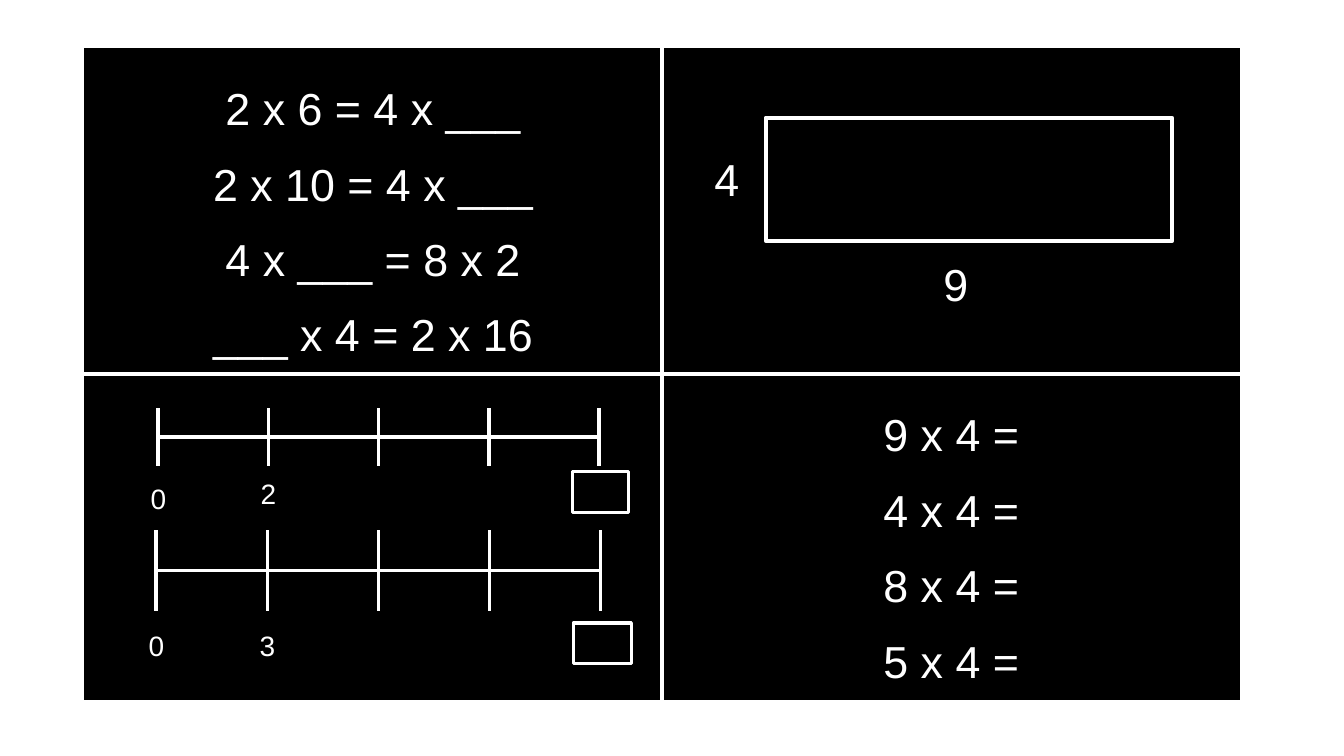
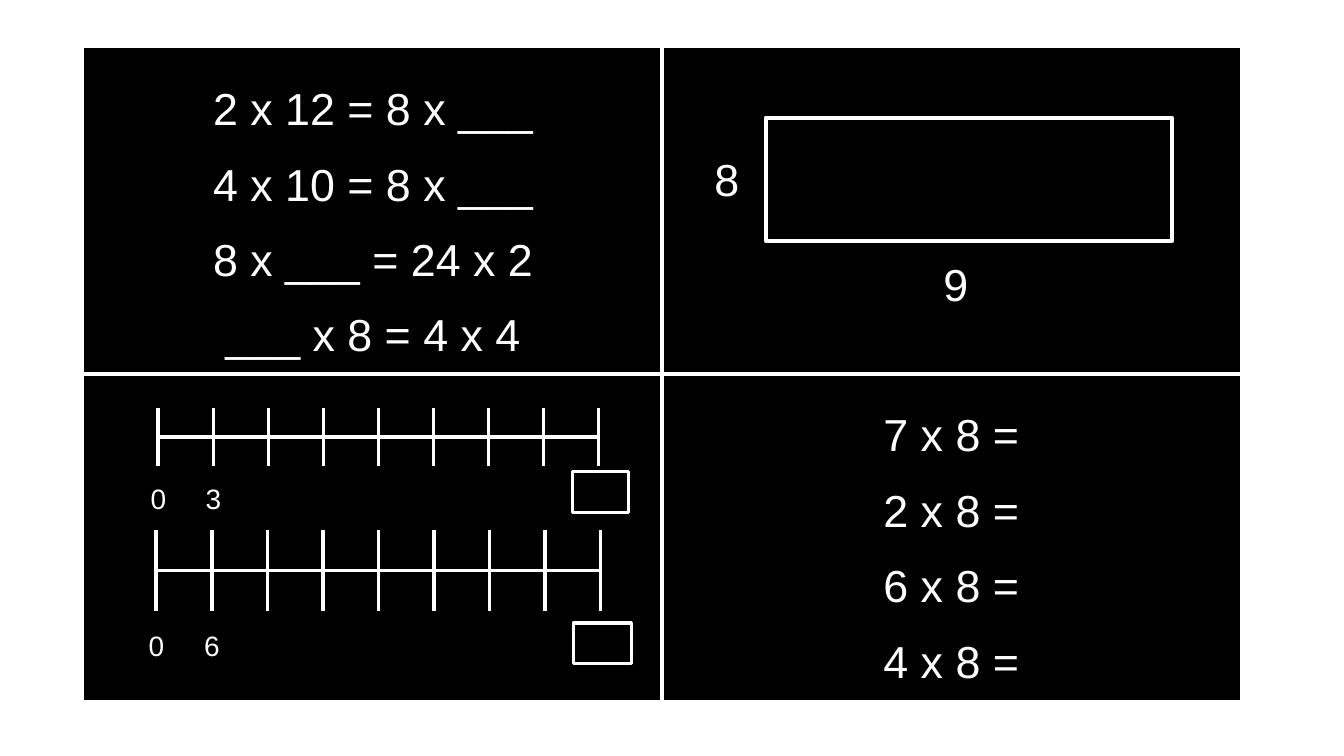
import pptx
import pptx.util
import pptx.dml.color
import pptx.enum.shapes
import pptx.enum.text
import pptx.oxml.ns
import lxml.etree

Cm = pptx.util.Cm
Pt = pptx.util.Pt
WHITE = pptx.dml.color.RGBColor(0xFF, 0xFF, 0xFF)
BLACK = pptx.dml.color.RGBColor(0x00, 0x00, 0x00)
LARGE = {"name": "Arial", "size": Pt(32), "bold": False}
SMALL = {"name": "Arial", "size": Pt(20), "bold": False}
CENTER = {"alignment": pptx.enum.text.PP_ALIGN.CENTER}
EQUATION = {**CENTER, "line_spacing": 1.5}
BOARD = (2.12, 1.2, 29.14, 16.44)

SHEETS = [
    {
        "equations": ["2 x 6 = 4 x ___", "2 x 10 = 4 x ___", "4 x ___ = 8 x 2", "___ x 4 = 2 x 16"],
        "facts": ["9 x 4 =", "4 x 4 =", "8 x 4 =", "5 x 4 ="],
        "sides": ("4", "9"),
        "jumps": 4,
        "steps": ("2", "3"),
        "step_drops": (1.6, 2.36),
    },
    {
        "equations": ["2 x 12 = 8 x ___", "4 x 10 = 8 x ___", "8 x ___ = 24 x 2", "___ x 8 = 4 x 4"],
        "facts": ["7 x 8 =", "2 x 8 =", "6 x 8 =", "4 x 8 ="],
        "sides": ("8", "9"),
        "jumps": 8,
        "steps": ("3", "6"),
        "step_drops": (1.72, 2.36),
    },
]


def apply(obj, values):
    for name, value in values.items():
        setattr(obj, name, value)


def write(p, text, font, layout):
    r = p.add_run()
    r.text = text
    apply(r.font, font)
    r.font.color.rgb = WHITE
    apply(p, layout)


def set_borders(cell, sides):
    tcPr = cell._tc.get_or_add_tcPr()
    qn = pptx.oxml.ns.qn
    for side in "LRTB":
        ln = lxml.etree.SubElement(tcPr, qn("a:ln" + side), w=str(Pt(3)))
        if side in sides:
            fill = lxml.etree.SubElement(ln, qn("a:solidFill"))
            lxml.etree.SubElement(fill, qn("a:srgbClr"), val=str(WHITE))
        else:
            lxml.etree.SubElement(ln, qn("a:noFill"))


def add_grid(s, box, cols, outer_sides):
    x, y, w, h = box
    tbl = s.shapes.add_table(2, cols, Cm(x), Cm(y), Cm(w), Cm(h)).table
    apply(tbl, {"first_row": False, "horz_banding": False})
    for col in tbl.columns:
        col.width = Cm(w / cols)
    for i, row in enumerate(tbl.rows):
        row.height = Cm(h / 2)
        for j, cell in enumerate(row.cells):
            sides = "B" if i == 0 else "T"
            if j > 0 or outer_sides:
                sides += "L"
            if j < cols - 1 or outer_sides:
                sides += "R"
            set_borders(cell, sides)
            cell.fill.solid()
            cell.fill.fore_color.rgb = BLACK
            apply(cell, {"margin_top": 0, "margin_bottom": 0,
                         "vertical_anchor": pptx.enum.text.MSO_ANCHOR.MIDDLE})
            cell.text_frame.paragraphs[0]._p.get_or_add_endParaRPr().set("sz", "800")
    return tbl


def add_label(s, x, y, w, h, text, font):
    tf = s.shapes.add_textbox(Cm(x), Cm(y), Cm(w), Cm(h)).text_frame
    tf.word_wrap = False
    write(tf.paragraphs[0], text, font, CENTER)


def add_outline(s, x, y, w, h, weight):
    sp = s.shapes.add_shape(pptx.enum.shapes.MSO_SHAPE.RECTANGLE, Cm(x), Cm(y), Cm(w), Cm(h))
    sp.shadow.inherit = False
    sp.fill.background()
    sp.line.color.rgb = WHITE
    sp.line.width = Pt(weight)


def fill_equations(cell, lines):
    tf = cell.text_frame
    for i, line in enumerate(lines):
        p = tf.add_paragraph() if i else tf.paragraphs[0]
        write(p, line, LARGE, EQUATION)


def add_area_model(s, box, sides):
    x, y, w, h = box[0] + 2.61, box[1] + 1.77, 10.24, 3.1
    label_w, label_h = 1.14, 1.63
    add_outline(s, x, y, w, h, 3)
    add_label(s, x - 1.55, y + (h - label_h) / 2, label_w, label_h, sides[0], LARGE)
    add_label(s, x + (w - label_w) / 2 - 0.33, y + h + 0.28, label_w, label_h, sides[1], LARGE)


def add_number_line(s, box, jumps, step, zero_drop, step_drop, answer):
    x, y, w, h = box
    add_grid(s, box, jumps, True)
    label_w, label_h = 0.92, 1.12
    for i, (text, drop) in enumerate((("0", zero_drop), (step, step_drop))):
        add_label(s, x + i * w / jumps - label_w / 2, y + drop, label_w, label_h, text, SMALL)
    answer_w, answer_drop = answer
    add_outline(s, x + w - answer_w / 2 + 0.04, y + answer_drop, answer_w, 1.02, 2.25)


def add_number_lines(s, box, sheet):
    x, y = box[:2]
    lines = (
        ((x + 1.87, y + 0.87, 11.1, 1.45), 1.72, (1.42, 1.6)),
        ((x + 1.82, y + 3.94, 11.2, 2.03), 2.36, (1.47, 2.34)),
    )
    for (line_box, zero_drop, answer), step, step_drop in zip(lines, sheet["steps"], sheet["step_drops"]):
        add_number_line(s, line_box, sheet["jumps"], step, zero_drop, step_drop, answer)


def add_sheet(prs, sheet):
    s = prs.slides.add_slide(prs.slide_layouts[6])
    x, y, w, h = BOARD
    tbl = add_grid(s, BOARD, 2, False)
    fill_equations(tbl.cell(0, 0), sheet["equations"])
    fill_equations(tbl.cell(1, 1), sheet["facts"])
    add_area_model(s, (x + w / 2, y, w / 2, h / 2), sheet["sides"])
    add_number_lines(s, (x, y + h / 2, w / 2, h / 2), sheet)


def main():
    prs = pptx.Presentation()
    apply(prs, {"slide_width": Cm(33.87), "slide_height": Cm(19.05)})
    for sheet in SHEETS:
        add_sheet(prs, sheet)
    prs.save("out.pptx")


if __name__ == "__main__":
    main()
